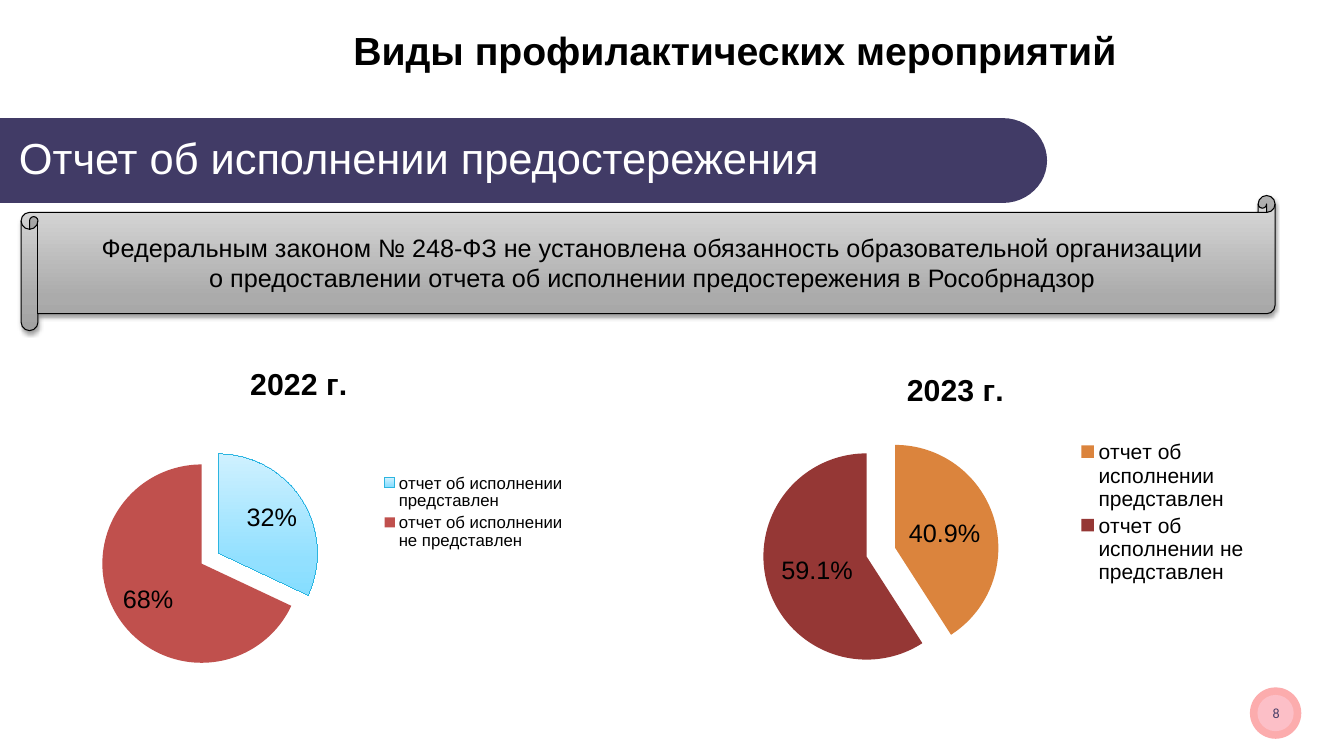
from copy import deepcopy

from pptx import Presentation
from pptx.chart.data import CategoryChartData
from pptx.dml.color import RGBColor
from pptx.enum.chart import XL_CHART_TYPE, XL_LABEL_POSITION, XL_LEGEND_POSITION
from pptx.enum.shapes import MSO_SHAPE
from pptx.enum.text import MSO_ANCHOR, PP_ALIGN
from pptx.oxml import parse_xml
from pptx.oxml.ns import nsdecls, qn
from pptx.util import Pt


def rgb(value):
    return RGBColor.from_string(value)


def chart_xml(body):
    """Make a chart element, with its namespace, from a short string."""
    tag, rest = body.split(" ", 1)
    return parse_xml(f"<c:{tag} {nsdecls('c')} {rest}")


class SlideBuilder:
    font = "Arial"
    black = "000000"
    band = "413B66"

    def __init__(self, slide):
        self.slide = slide

    def style(self, font, size, color=black, bold=False, name=None):
        font.name, font.size, font.bold = name or self.font, Pt(size), bold
        font.color.rgb = rgb(color)

    def place(self, sp, box):
        sp.left, sp.top, sp.width, sp.height = [Pt(v) for v in box]

    def paint(self, fill, colors):
        """Solid fill for one colour, upward gradient for three."""
        if isinstance(colors, str):
            fill.solid()
            fill.fore_color.rgb = rgb(colors)
            return
        fill.gradient()
        fill.gradient_angle = 90
        stops = fill._xPr.find(qn("a:gradFill")).find(qn("a:gsLst"))
        stops.insert(1, deepcopy(stops[0]))
        for stop, color, pos in zip(fill.gradient_stops, colors, (0, 0.25, 1)):
            stop.color.rgb = rgb(color)
            stop.position = pos

    def set_text(self, sp, text, size, align=PP_ALIGN.CENTER, **look):
        tf = sp.text_frame
        tf.word_wrap = True
        tf.vertical_anchor = MSO_ANCHOR.MIDDLE
        tf.text = text
        p = tf.paragraphs[0]
        p.alignment = align
        for r in p.runs:
            self.style(r.font, size, **look)

    def title(self, text, box, size):
        sp = self.slide.shapes.title
        self.place(sp, box)
        self.set_text(sp, text, size, bold=True)

    def text(self, text, box, size, **look):
        sp = self.slide.shapes.add_textbox(*[Pt(v) for v in box])
        self.set_text(sp, text, size, **look)

    def shape(self, kind, box, colors, line=None):
        sp = self.slide.shapes.add_shape(kind, *[Pt(v) for v in box])
        sp.shadow.inherit = False
        self.paint(sp.fill, colors)
        if line:
            sp.line.color.rgb = rgb(line)
            sp.line.width = Pt(0.75)
        else:
            sp.line.fill.background()
        return sp

    def drop_shadow(self, sp):
        effects = sp._element.spPr.find(qn("a:effectLst"))
        effects.append(parse_xml(
            f'<a:outerShdw {nsdecls("a")} blurRad="{Pt(3.1)}" dist="{Pt(1.6)}" '
            'dir="5400000" rotWithShape="0"><a:srgbClr val="000000">'
            '<a:alpha val="38000"/></a:srgbClr></a:outerShdw>'))

    def pie(self, year, values, box, slices, explosions, plot, legend_size,
            fmt, position):
        data = CategoryChartData(number_format=fmt)
        data.categories = ["отчет об исполнении представлен",
                           "отчет об исполнении не представлен"]
        data.add_series(year, values)
        chart = self.slide.shapes.add_chart(
            XL_CHART_TYPE.PIE, *[Pt(v) for v in box], data).chart
        self.style(chart.font, 18)

        # Title and legend
        chart.has_title = True
        tf = chart.chart_title.text_frame
        tf.text = year
        self.style(tf.paragraphs[0].runs[0].font, 21.6, bold=True)
        chart.chart_title.include_in_layout = False
        chart.has_legend = True
        chart.legend.position = XL_LEGEND_POSITION.RIGHT
        chart.legend.include_in_layout = False
        self.style(chart.legend.font, legend_size)

        # Slices and their labels
        pie = chart.plots[0]
        pie.vary_by_categories = True
        for i, (colors, explosion) in enumerate(zip(slices, explosions)):
            fmt_slice = pie.series[0].points[i].format
            self.paint(fmt_slice.fill, colors)
            if isinstance(colors, str):
                fmt_slice.line.fill.background()
            else:
                fmt_slice.line.color.rgb = rgb("2CB5E0")
            fmt_slice.fill._xPr.addprevious(
                chart_xml(f'explosion val="{explosion}"/>'))
        pie.has_data_labels = True
        labels = pie.data_labels
        labels.show_value, labels.show_percentage = True, False
        labels.number_format, labels.number_format_is_linked = fmt, False
        labels.position = position
        self.style(labels.font, 18)

        # Plot position as fractions of the chart
        area = chart._chartSpace.chart.plotArea
        for old in area.findall(qn("c:layout")):
            area.remove(old)
        sizes = "".join(f'<c:{k} val="{v}"/>' for k, v in zip("xywh", plot))
        area.insert(0, chart_xml(
            'layout ><c:manualLayout><c:layoutTarget val="inner"/>'
            '<c:xMode val="edge"/><c:yMode val="edge"/>'
            f'{sizes}</c:manualLayout></c:layout>'))


def main():
    prs = Presentation()
    prs.slide_width, prs.slide_height = Pt(960), Pt(540)
    s = SlideBuilder(prs.slides.add_slide(prs.slide_layouts[5]))

    # Page number badge
    s.shape(MSO_SHAPE.OVAL, (892.8, 491, 36.7, 36.7), "FCACAD")
    s.shape(MSO_SHAPE.OVAL, (898.2, 496.4, 25.9, 25.9), "FCBFC7")
    s.text("8", (869, 499.7, 85, 19.4), 10, color="493F68", name="Calibri")

    # Title and heading band
    s.title("Виды профилактических мероприятий", (121.7, 15.1, 806.4, 41), 28)
    s.shape(MSO_SHAPE.RECTANGLE, (0, 84.4, 717, 60.6), s.band)
    s.shape(MSO_SHAPE.OVAL, (684.7, 84.4, 63.2, 60.6), s.band)
    s.text("Отчет об исполнении предостережения", (6.5, 90, 702.7, 44.6), 31,
           color="FFFFFF", align=PP_ALIGN.LEFT)

    # Scroll with the legal note
    scroll = s.shape(MSO_SHAPE.HORIZONTAL_SCROLL, (15.1, 139.7, 895.7, 96.5),
                     ("A2A2A2", "ABABAB", "DCDCDC"), s.black)
    s.drop_shadow(scroll)
    s.text("Федеральным законом № 248-ФЗ не установлена обязанность "
           "образовательной организации\vо предоставлении отчета об "
           "исполнении предостережения в Рособрнадзор",
           (49, 162, 833.8, 51), 18)

    # Report shares by year
    s.pie("2022 г.", (0.32, 0.68), (15.1, 247.7, 396.7, 236.2),
          (("86DEFF", "92E0FF", "CFF1FF"), "C0504D"), (10, 10),
          (0.16, 0.34, 0.36, 0.6), 12, "0%", XL_LABEL_POSITION.INSIDE_END)
    s.pie("2023 г.", (0.409, 0.591), (465.8, 252.7, 433.4, 226.8),
          ("DB843D", "953735"), (25, 4),
          (0.19, 0.31, 0.34, 0.65), 15, "0.0%", XL_LABEL_POSITION.CENTER)

    prs.save("out.pptx")


if __name__ == "__main__":
    main()
